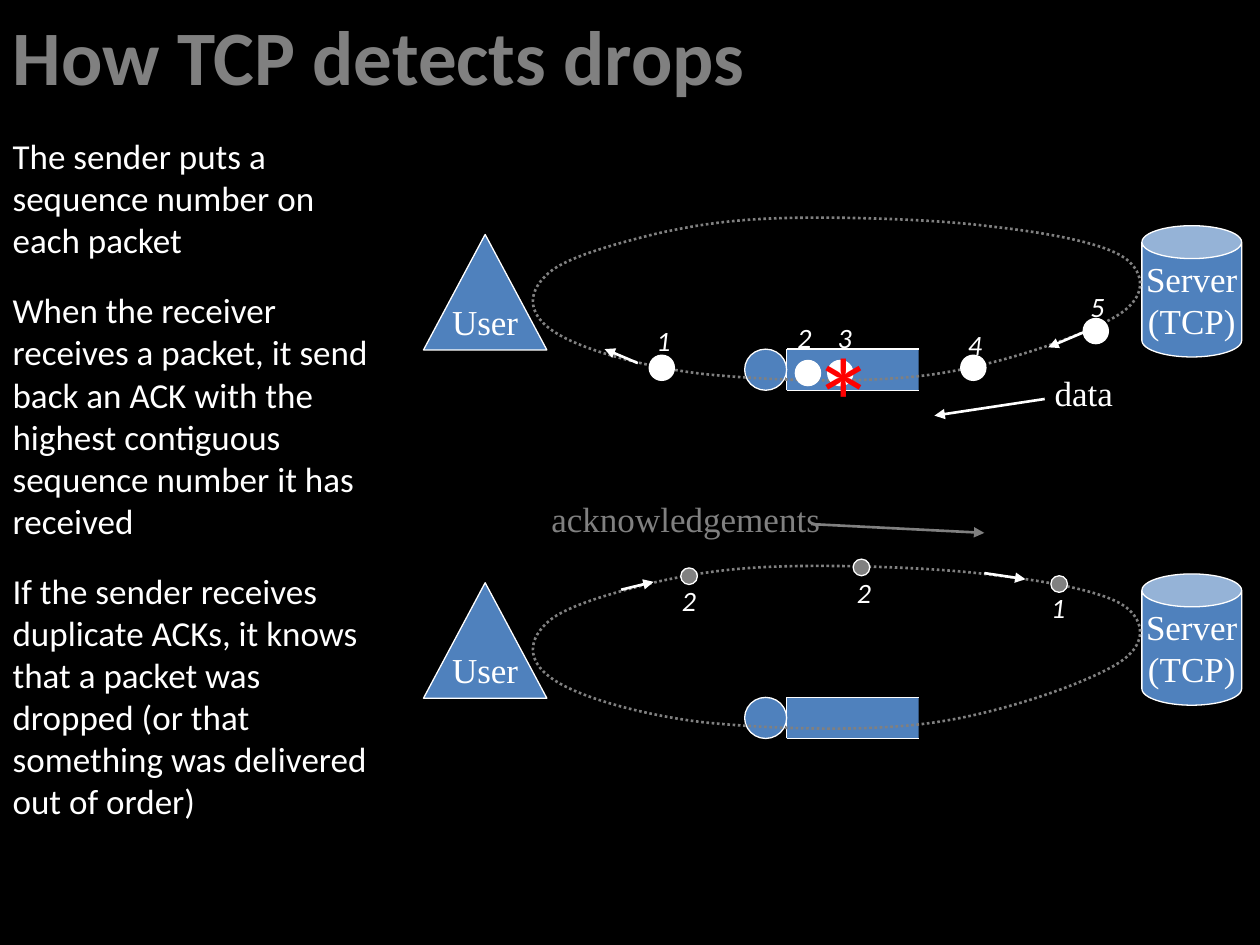
from lxml.etree import SubElement
from pptx import Presentation
from pptx.dml.color import RGBColor
from pptx.enum.dml import MSO_LINE
from pptx.enum.shapes import MSO_CONNECTOR, MSO_SHAPE as SHAPE
from pptx.enum.text import MSO_ANCHOR as ANCHOR, MSO_AUTO_SIZE as AUTO, PP_ALIGN as ALIGN
from pptx.oxml.ns import qn
from pptx.util import Pt

COLORS = {"background": "000000", "node": "4F81BD", "light": "FFFFFF",
          "muted": "808080", "drop": "FF0000"}
BODY_FONT, DIAGRAM_FONT = "Calibri", "Times New Roman"
LOWER = 199

EXPLANATION = [
    "The sender puts a sequence number on each packet",
    "When the receiver receives a packet, it send back an ACK with the highest "
    "contiguous sequence number it has received",
    "If the sender receives duplicate ACKs, it knows that a packet was dropped "
    "(or that something was delivered out of order)",
]
LOOP = [
    (312.5, 157),
    (321.8, 147.6), (350.6, 139.7), (373.7, 133.9),
    (396, 128.9), (417.6, 125.3), (450, 124.6),
    (481.7, 123.8), (535.7, 125.3), (567.4, 129.6),
    (599.8, 133.2), (630.7, 139), (643, 147.6),
    (654.5, 156.2), (655.9, 169.9), (637.9, 180.7),
    (619.9, 191.5), (573.8, 208.1), (534.2, 213.8),
    (494.6, 219.6), (438.5, 217.4), (402.5, 213.8),
    (365.8, 209.5), (331.9, 199.4), (317.5, 190.1),
    (302.4, 180.7), (300.2, 168.5), (312.5, 157),
]
PACKETS = [(619, 182), (549, 203), (454.5, 206), (473, 206), (371, 203)]
ACKS = [(389, 324.5), (487.5, 319.5), (600.5, 329)]
NUMBERS = [("1", 368, 181.5), ("2", 448.5, 179.5), ("3", 471.5, 179.5),
           ("4", 546, 183.5), ("5", 616, 162),
           ("1", 593.5, 334), ("2", 482.5, 325.5), ("2", 382.5, 330)]
ARROWS = [((597, 228), (534, 237.5), "light"),
          ((619, 190), (599, 198.5), "light"),
          ((364.5, 207.5), (345.5, 199.5), "light"),
          ((463.5, 299.5), (562.5, 304.5), "muted"),
          ((562.5, 327.5), (586, 331), "light"),
          ((355, 337), (373.5, 332.5), "light")]


def rgb(name):
    return RGBColor.from_string(COLORS[name])


class Diagram:
    def __init__(self, slide):
        self.slide = slide
        self.shapes = slide.shapes
        slide.background.fill.solid()
        slide.background.fill.fore_color.rgb = rgb("background")

    def set_text(self, frame, lines, size, color="light", font=DIAGRAM_FONT,
                 align=ALIGN.LEFT, bold=False, italic=False):
        frame.text = "\n".join(lines)
        for paragraph in frame.paragraphs:
            paragraph.alignment = align
            style = paragraph.font
            style.name, style.size = font, Pt(size)
            style.bold, style.italic = bold, italic
            style.color.rgb = rgb(color)

    def place(self, holder, left, top, width, height):
        holder.left, holder.top = Pt(left), Pt(top)
        holder.width, holder.height = Pt(width), Pt(height)

    def title(self, wording, *box):
        heading = self.shapes.title
        self.place(heading, *box)
        self.set_text(heading.text_frame, [wording], 44, "muted", BODY_FONT, bold=True)
        heading.text_frame.vertical_anchor = ANCHOR.MIDDLE

    def body(self, lines, *box):
        holder = self.slide.placeholders[1]
        self.place(holder, *box)
        self.set_text(holder.text_frame, lines, 20, font=BODY_FONT)
        for paragraph in holder.text_frame.paragraphs:
            paragraph.space_before, paragraph.space_after = Pt(4), Pt(12)
            props = paragraph._p.get_or_add_pPr()
            props.set("marL", "0")
            props.set("indent", "0")
            bullet = SubElement(props, qn("a:buNone"))
            props.find(qn("a:spcAft")).addnext(bullet)

    def node(self, kind, left, top, width, height, fill="node", lines=(), outlined=True):
        shape = self.shapes.add_shape(kind, Pt(left), Pt(top), Pt(width), Pt(height))
        shape.shadow.inherit = False
        shape.fill.solid()
        shape.fill.fore_color.rgb = rgb(fill)
        if outlined:
            shape.line.color.rgb = rgb("light")
            shape.line.width = Pt(0.75)
        else:
            shape.line.fill.background()
        if lines:
            self.set_text(shape.text_frame, lines, 20, align=ALIGN.CENTER)
            shape.text_frame.word_wrap = False
            shape.text_frame.vertical_anchor = ANCHOR.MIDDLE
        return shape

    def line(self, start, end, color="light", width=0.75, arrow=False):
        link = self.shapes.add_connector(MSO_CONNECTOR.STRAIGHT, *map(Pt, start + end))
        link.line.color.rgb = rgb(color)
        link.line.width = Pt(width)
        if arrow:
            SubElement(link.line._get_or_add_ln(), qn("a:tailEnd"), type="triangle")
        SubElement(link._element.spPr, qn("a:effectLst"))

    def loop(self, points):
        start, *rest = [(Pt(x), Pt(y)) for x, y in points]
        builder = self.shapes.build_freeform(*start)
        builder.add_line_segments(rest, close=True)
        curve = builder.convert_to_shape()
        segments = list(curve._element.iter(qn("a:lnTo")))[:len(rest)]
        for first, second, third in zip(*[iter(segments)] * 3):
            first.tag = qn("a:cubicBezTo")
            for segment in (second, third):
                first.append(segment[0])
                segment.getparent().remove(segment)
        curve.shadow.inherit = False
        curve.fill.background()
        curve.line.color.rgb = rgb("muted")
        curve.line.width = Pt(1.5)
        curve.line.dash_style = MSO_LINE.ROUND_DOT

    def label(self, wording, left, top, width, height, size=20, tight=False, **style):
        box = self.shapes.add_textbox(Pt(left), Pt(top), Pt(width), Pt(height))
        frame = box.text_frame
        frame.word_wrap = tight
        frame.auto_size = AUTO.SHAPE_TO_FIT_TEXT
        if tight:
            frame.margin_left = frame.margin_right = 0
            frame.margin_top = frame.margin_bottom = 0
        self.set_text(frame, [wording], size, **style)

    def network(self, drop):
        self.node(SHAPE.ISOSCELES_TRIANGLE, 242, 134 + drop, 70.5, 66, lines=["User"])
        server = self.node(SHAPE.CAN, 652.5, 129 + drop, 57, 75, lines=["Server", "(TCP)"])
        server.adjustments[0] = 0.33
        left, right, top, bottom = 449.5, 525, 199.5 + drop, 223 + drop
        self.node(SHAPE.RECTANGLE, left, top, right - left, bottom - top, outlined=False)
        queue = [(right, top), (left, top), (left, bottom), (right, bottom)]
        for start, end in zip(queue, queue[1:]):
            self.line(start, end)
        self.node(SHAPE.OVAL, 425.5, top, 24, 23.5)
        self.loop([(x, y + drop) for x, y in LOOP])


def main():
    deck = Presentation()
    deck.slide_width, deck.slide_height = Pt(720), Pt(540)
    diagram = Diagram(deck.slides.add_slide(deck.slide_layouts[1]))
    diagram.title("How TCP detects drops", 0, 0, 720, 62)
    diagram.body(EXPLANATION, 0, 73.5, 219.5, 466.5)
    for drop in (0, LOWER):
        diagram.network(drop)
    diagram.label("data", 595.5, 209, 48, 31.5)
    diagram.label("acknowledgements", 308, 281, 169, 31.5, color="muted")
    for start, end, color in ARROWS:
        diagram.line(start, end, color, 1.5, arrow=True)
    for positions, size, fill in ((PACKETS, 14.4, "light"), (ACKS, 9.5, "muted")):
        for left, top in positions:
            diagram.node(SHAPE.OVAL, left, top, size, size, fill)
    for number, left, top in NUMBERS:
        diagram.label(number, left, top, 23, 26.5, 16, font=BODY_FONT, italic=True)
    diagram.label("*", 464.5, 184.5, 24, 87, 72, tight=True, color="drop", font=BODY_FONT)
    deck.save("out.pptx")


if __name__ == "__main__":
    main()
